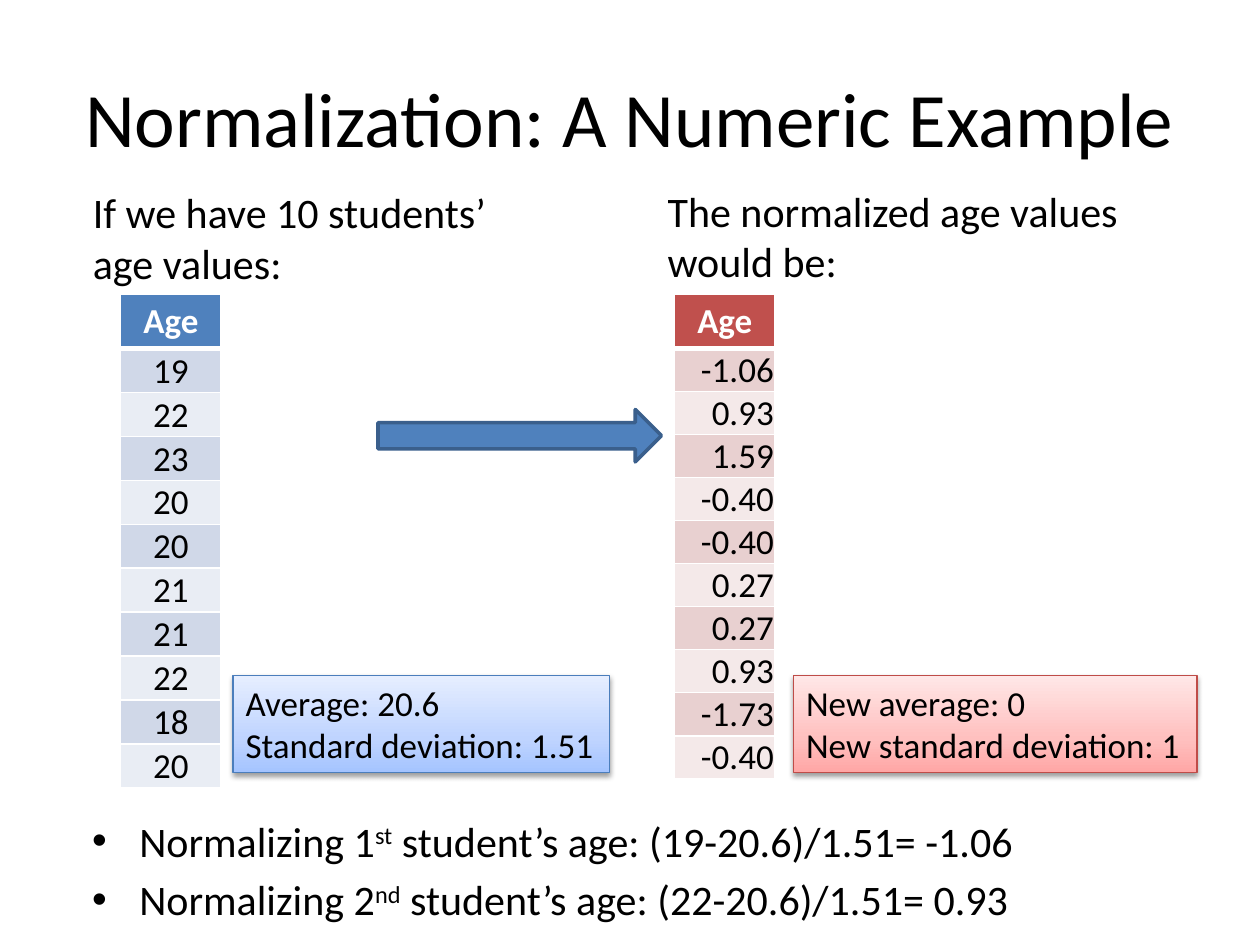
import copy
from dataclasses import dataclass

import pptx
import pptx.dml.color
import pptx.enum.shapes
import pptx.enum.text
import pptx.oxml
import pptx.oxml.ns
import pptx.util

Pt = pptx.util.Pt
RGB = pptx.dml.color.RGBColor.from_string
qn = pptx.oxml.ns.qn
ALIGN = pptx.enum.text.PP_ALIGN
ANCHOR = pptx.enum.text.MSO_ANCHOR
SHAPE = pptx.enum.shapes.MSO_SHAPE
NS = pptx.oxml.ns.nsdecls("a")


@dataclass(frozen=True)
class Theme:
    font: str = "Calibri"
    title: int = 44
    text: int = 24
    small: int = 20
    black: str = "000000"
    white: str = "FFFFFF"
    arrow: str = "4F81BD"
    arrow_line: str = "3A5F8C"
    # header, odd row, even row
    blue_table: tuple = ("4F81BD", "D0D8E8", "E9EDF4")
    red_table: tuple = ("C0504D", "E8D0D0", "F4E9E9")
    # gradient from bottom to top, then outline
    blue_box: tuple = ("A4C4FF", "BFD4FF", "E6EEFF", "4B7EBC")
    red_box: tuple = ("FFA6A5", "FFC0BF", "FFE7E7", "BF4C48")


theme = Theme()


def style(p, size, color=theme.black, align=None, bold=None):
    p.font.name = theme.font
    p.font.size = Pt(size)
    p.font.color.rgb = RGB(color)
    p.font.bold = bold
    p.alignment = align


def set_borders(cell, bottom):
    tcPr = cell._tc.get_or_add_tcPr()
    for i, (side, width) in enumerate((("L", 1), ("R", 1), ("T", 1), ("B", bottom))):
        tcPr.insert(i, pptx.oxml.parse_xml(
            f'<a:ln{side} {NS} w="{Pt(width)}"><a:solidFill>'
            f'<a:srgbClr val="{theme.white}"/></a:solidFill></a:ln{side}>'))


prs = pptx.Presentation()
prs.slide_width, prs.slide_height = Pt(720), Pt(540)
s = prs.slides.add_slide(prs.slide_layouts[1])

# Title
title = s.shapes.title
title.left, title.top, title.width, title.height = Pt(36), Pt(21.6), Pt(648), Pt(90)
title.text_frame.text = "Normalization: A Numeric Example"
style(title.text_frame.paragraphs[0], theme.title, align=ALIGN.CENTER)

# Worked examples
body = s.placeholders[1]
body.left, body.top, body.width, body.height = Pt(45.4), Pt(462.2), Pt(653.8), Pt(77.8)
tf = body.text_frame
examples = [("1", "st", "(19-20.6)/1.51= -1.06"), ("2", "nd", "(22-20.6)/1.51= 0.93")]
for i, (number, suffix, formula) in enumerate(examples):
    p = tf.paragraphs[0] if i == 0 else tf.add_paragraph()
    style(p, theme.text)
    for text in (f"Normalizing {number}", suffix, f" student’s age: {formula}"):
        r = p.add_run()
        r.text = text
        if text == suffix:
            r.font._element.set("baseline", "30000")

# Captions above the tables
captions = [("If we have 10 students’ age values:", 46, 103.2, 273.6),
            ("The normalized age values would be:", 374.4, 102.4, 289.4)]
for text, left, top, width in captions:
    tf = s.shapes.add_textbox(Pt(left), Pt(top), Pt(width), Pt(65.4)).text_frame
    tf.word_wrap = True
    tf.text = text
    style(tf.paragraphs[0], theme.text)

# Age tables
ages = ["19", "22", "23", "20", "20", "21", "21", "22", "18", "20"]
normalized = ["-1.06", "0.93", "1.59", "-0.40", "-0.40",
              "0.27", "0.27", "0.93", "-1.73", "-0.40"]
tables = [(ages, 69, 25.1, theme.blue_table, ALIGN.CENTER, ANCHOR.BOTTOM),
          (normalized, 385.5, 24.6, theme.red_table, ALIGN.RIGHT, ANCHOR.MIDDLE)]
for values, left, row_height, colors, align, anchor in tables:
    table = s.shapes.add_table(len(values) + 1, 1, Pt(left), Pt(168), Pt(57.4),
                               Pt(31 + row_height * len(values))).table
    for i, text in enumerate(["Age"] + values):
        table.rows[i].height = Pt(row_height if i else 31)
        cell = table.cell(i, 0)
        cell.text = text
        cell.fill.solid()
        p = cell.text_frame.paragraphs[0]
        if i == 0:
            cell.fill.fore_color.rgb = RGB(colors[0])
            style(p, theme.small, theme.white, ALIGN.CENTER, True)
        else:
            cell.fill.fore_color.rgb = RGB(colors[1 if i % 2 else 2])
            cell.vertical_anchor = anchor
            cell.margin_left = cell.margin_right = Pt(0.7)
            cell.margin_top = Pt(row_height - 24.4)
            cell.margin_bottom = 0
            style(p, theme.small, align=align, bold=False)
        set_borders(cell, 1 if i else 3)

# Arrow from ages to normalized ages
sp = s.shapes.add_shape(SHAPE.RIGHT_ARROW, Pt(216), Pt(234), Pt(162), Pt(30))
sp.shadow.inherit = False
sp.fill.solid()
sp.fill.fore_color.rgb = RGB(theme.arrow)
sp.line.color.rgb = RGB(theme.arrow_line)
sp.line.width = Pt(2)

# Statistics boxes
boxes = [(("Average: 20.6", "Standard deviation: 1.51"), 133.2, 215.3, theme.blue_box),
         (("New average: 0", "New standard deviation: 1"), 453.6, 230.4, theme.red_box)]
for lines, left, width, colors in boxes:
    sp = s.shapes.add_shape(SHAPE.RECTANGLE, Pt(left), Pt(385.9), Pt(width), Pt(55.7))
    sp.fill.gradient()
    sp.fill.gradient_angle = 90
    stops = sp._element.spPr.find(".//" + qn("a:gsLst"))
    stops.append(copy.deepcopy(stops[0]))
    for stop, position, color in zip(sp.fill.gradient_stops, (0, 0.35, 1), colors):
        stop.position = position
        stop.color.rgb = RGB(color)
    sp.line.color.rgb = RGB(colors[3])
    sp.line.width = Pt(0.75)
    sp.shadow.inherit = False
    sp._element.spPr.find(qn("a:effectLst")).append(pptx.oxml.parse_xml(
        f'<a:outerShdw {NS} blurRad="{Pt(3.1)}" dist="{Pt(1.6)}" dir="5400000" '
        f'rotWithShape="0"><a:srgbClr val="{theme.black}"><a:alpha val="38000"/>'
        '</a:srgbClr></a:outerShdw>'))
    tf = sp.text_frame
    tf.word_wrap = False
    tf.vertical_anchor = ANCHOR.TOP
    tf.text = "\n".join(lines)
    for p in tf.paragraphs:
        style(p, theme.small, align=ALIGN.LEFT)

prs.save("out.pptx")
